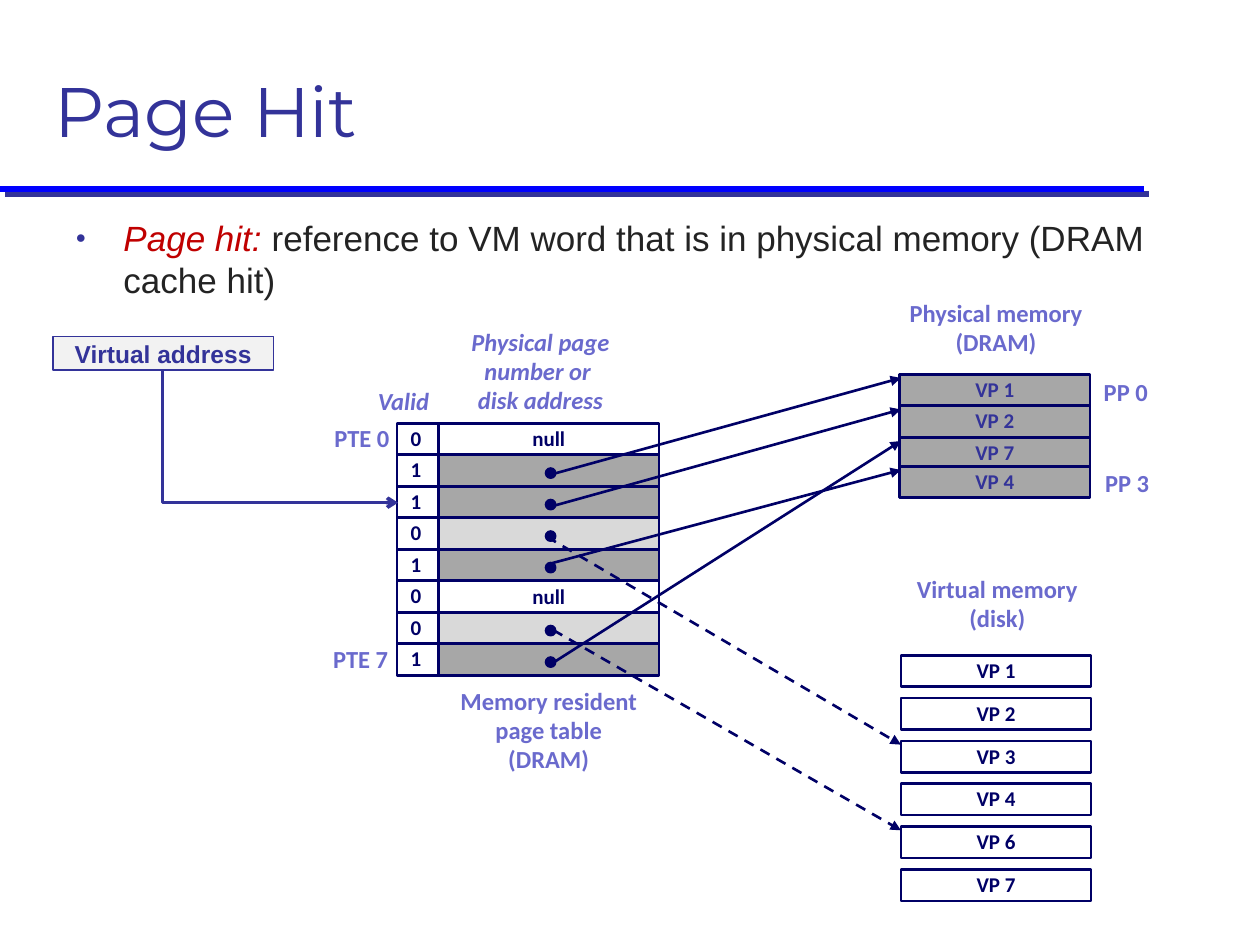
from typing import NamedTuple

from lxml.etree import SubElement
from pptx import Presentation
from pptx.dml.color import RGBColor
from pptx.enum.dml import MSO_LINE
from pptx.enum.shapes import MSO_CONNECTOR, MSO_SHAPE
from pptx.enum.text import MSO_ANCHOR, MSO_AUTO_SIZE, PP_ALIGN
from pptx.oxml.ns import qn
from pptx.util import Inches, Pt

# The slide is a grid of 40 columns by 30 rows; one table row is one grid row
COLS, ROWS = 40, 30
NAVY, INDIGO, LILAC = "000066", "333399", "6A6ACD"
WHITE, LIGHT, DARK = "FFFFFF", "D9D9D9", "A7A7A7"


class Box(NamedTuple):
    x: float
    y: float
    w: float
    h: float


class Entry(NamedTuple):
    valid: str
    fill: str
    text: str = ""


class Frame(NamedTuple):
    name: str
    y: float


class Link(NamedTuple):
    row: int
    x: float
    dy: float
    target: Frame
    dash: bool = False


class Label(NamedTuple):
    text: str
    box: Box
    align: PP_ALIGN = PP_ALIGN.CENTER
    anchor: MSO_ANCHOR = MSO_ANCHOR.MIDDLE
    italic: bool = False
    wrap: bool = False


TABLE_X, TABLE_Y, VALID_W, ADDR_W = 12.6, 13.44, 1.32, 7
DRAM_X, DISK_X, FRAME_W = 28.56, 28.6, 6.04

ENTRIES = [Entry("0", WHITE, "null"), Entry("1", DARK), Entry("1", DARK),
           Entry("0", LIGHT), Entry("1", DARK), Entry("0", WHITE, "null"),
           Entry("0", LIGHT), Entry("1", DARK)]
DRAM = [Frame("VP 1", 11.88), Frame("VP 2", 12.88),
        Frame("VP 7", 13.88), Frame("VP 4", 14.8)]
DISK = [Frame(f"VP {n}", 20.8 + 1.36 * i)
        for i, n in enumerate((1, 2, 3, 4, 6, 7))]
LINKS = [Link(1, 17.44, 0.64, DRAM[0]), Link(2, 17.64, 0.6, DRAM[1]),
         Link(3, 17.36, 0.6, DISK[2], True), Link(4, 17.52, 0.44, DRAM[3]),
         Link(6, 17.56, 0.56, DISK[4], True), Link(7, 17.56, 0.6, DRAM[2])]
LABELS = [
    Label("Memory resident\npage table\n(DRAM)", Box(14.2, 21.64, 6.44, 3.2),
          anchor=MSO_ANCHOR.TOP),
    Label("Physical memory\n(DRAM)", Box(28.44, 9.32, 6.36, 2.28),
          anchor=MSO_ANCHOR.TOP),
    Label("Virtual memory\n(disk)", Box(28.68, 18.08, 5.96, 2.28),
          anchor=MSO_ANCHOR.TOP),
    Label("Valid", Box(11.6, 12.12, 3, 1.36), PP_ALIGN.LEFT,
          MSO_ANCHOR.TOP, italic=True, wrap=True),
    Label("Physical page\nnumber or \ndisk address",
          Box(14.44, 10.2, 5.44, 3.2), italic=True),
    Label("PTE 0", Box(10.2, 13.24, 2.56, 1.36), PP_ALIGN.RIGHT),
    Label("PTE 7", Box(10.16, 20.28, 2.56, 1.36), PP_ALIGN.RIGHT),
    Label("PP 0", Box(34.64, 11.8, 2.2, 1.36)),
    Label("PP 3", Box(34.68, 14.68, 2.2, 1.36)),
]

prs = Presentation()
prs.slide_width, prs.slide_height = Inches(10), Inches(7.5)
s = prs.slides.add_slide(prs.slide_layouts[1])


def gx(cols: float) -> int:
    return round(prs.slide_width * cols / COLS)


def gy(rows: float) -> int:
    return round(prs.slide_height * rows / ROWS)


def place(box: Box) -> tuple:
    return gx(box.x), gy(box.y), gx(box.w), gy(box.h)


def rgb(color: str) -> RGBColor:
    return RGBColor.from_string(color)


def add_run(p, text: str, *, size: float, color: str, font: str = "Calibri",
            bold: bool = False, italic: bool = False) -> None:
    r = p.add_run()
    r.text = text
    f = r.font
    f.name, f.size, f.bold, f.italic = font, Pt(size), bold, italic
    f.color.rgb = rgb(color)


def write(sp, text: str, *, align=PP_ALIGN.CENTER, anchor=MSO_ANCHOR.MIDDLE,
          wrap: bool = False, spacing: float = 0.98, bold: bool = True,
          **fmt) -> None:
    tf = sp.text_frame
    tf.word_wrap, tf.vertical_anchor = wrap, anchor
    for i, line in enumerate(text.split("\n")):
        p = tf.add_paragraph() if i else tf.paragraphs[0]
        p.alignment, p.line_spacing = align, spacing
        add_run(p, line, bold=bold, **fmt)


def add_box(box: Box, fill: str, line: str = NAVY, width: float = 1.5,
            kind=MSO_SHAPE.RECTANGLE):
    sp = s.shapes.add_shape(kind, *place(box))
    sp.shadow.inherit = False
    sp.fill.solid()
    sp.fill.fore_color.rgb = rgb(fill)
    sp.line.color.rgb = rgb(line)
    sp.line.width = Pt(width)
    return sp


def add_text(box: Box, text: str, **fmt) -> None:
    tb = s.shapes.add_textbox(*place(box))
    write(tb, text, **fmt)
    tb.text_frame.auto_size = MSO_AUTO_SIZE.SHAPE_TO_FIT_TEXT


def add_line(x1: float, y1: float, x2: float, y2: float, *, color: str = NAVY,
             width: float = 1.5, head: str = "", dash: bool = False,
             kind=MSO_CONNECTOR.STRAIGHT):
    cx = s.shapes.add_connector(kind, gx(x1), gy(y1), gx(x2), gy(y2))
    cx.line.color.rgb = rgb(color)
    cx.line.width = Pt(width)
    if dash:
        cx.line.dash_style = MSO_LINE.DASH
    if head:
        SubElement(cx.line._get_or_add_ln(), qn("a:tailEnd"), type=head)
    SubElement(cx._element.spPr, qn("a:effectLst"))
    return cx


# Rule under the title, with its offset shadow
rule = add_line(0, 6, 36.32, 6, color="0000FF", width=3.5)
shadow = SubElement(rule._element.spPr.find(qn("a:effectLst")),
                    qn("a:outerShdw"), dist=str(Pt(4.2)), dir="2700000",
                    algn="ctr", rotWithShape="0")
SubElement(shadow, qn("a:srgbClr"), val=INDIGO)

# Title and bullet
title, body = s.shapes.title, s.placeholders[1]
title.left, title.top, title.width, title.height = place(Box(1.32, 1.56, 36.24, 3.44))
write(title, "Page Hit", align=PP_ALIGN.LEFT, anchor=MSO_ANCHOR.BOTTOM, wrap=True,
      spacing=1.0, bold=False, size=40, color=INDIGO, font="Montserrat")
body.left, body.top, body.width, body.height = place(Box(2, 6.68, 36.36, 2.64))
for ph in (title, body):
    ph.text_frame.auto_size = MSO_AUTO_SIZE.NONE
p = body.text_frame.paragraphs[0]
add_run(p, "Page hit: ", size=20, color="C00000", font="Arial", italic=True)
add_run(p, "reference to VM word that is in physical memory (DRAM cache hit)",
        size=20, color="232323", font="Arial")
pPr = p._p.get_or_add_pPr()
pPr.set("marL", str(Inches(0.38)))
pPr.set("indent", str(-Inches(0.38)))
SubElement(SubElement(pPr, qn("a:buClr")), qn("a:srgbClr"), val=INDIGO)
SubElement(pPr, qn("a:buSzPct"), val="50000")
SubElement(pPr, qn("a:buChar"), char="●")

# Page table
for i, entry in enumerate(ENTRIES):
    y = TABLE_Y + i
    cell = add_box(Box(TABLE_X + VALID_W, y, ADDR_W, 1), entry.fill)
    if entry.text:
        write(cell, entry.text, size=12, color=NAVY)
    add_box(Box(TABLE_X, y, VALID_W, 1), WHITE).fill.background()
    add_text(Box(TABLE_X + 0.04, y - 0.1, 1.12, 1.2), entry.valid,
             align=PP_ALIGN.LEFT, anchor=MSO_ANCHOR.TOP, size=12, color=NAVY)

# Frames of physical memory and pages on disk
for frames, x, fill, color in ((DRAM, DRAM_X, DARK, INDIGO),
                               (DISK, DISK_X, WHITE, NAVY)):
    for frame in frames:
        write(add_box(Box(x, frame.y, FRAME_W, 1), fill), frame.name,
              size=12, color=color)

# Pointers from table entries to pages
for link in LINKS:
    y = TABLE_Y + link.row
    add_box(Box(17.32, y + 0.42, 0.32, 0.32), NAVY, width=1, kind=MSO_SHAPE.OVAL)
    add_line(link.x, y + link.dy, DISK_X, link.target.y + 0.12,
             head="triangle", dash=link.dash)

# Labels
for label in LABELS:
    add_text(label.box, label.text, align=label.align, anchor=label.anchor,
             wrap=label.wrap, italic=label.italic, size=14, color=LILAC)

# Virtual address and its elbow arrow, a quarter turn of the preset bend
write(add_box(Box(1.68, 10.68, 7, 1.08), "F2F2F2", INDIGO, 1),
      "Virtual address", wrap=True, spacing=1.0, size=14, color=INDIGO, font="Arial")
elbow = add_line(6.78, 10.1, 11.02, 17.58, color=INDIGO, width=2, head="arrow",
                 kind=MSO_CONNECTOR.ELBOW)
spPr = elbow._element.spPr
spPr.find(qn("a:prstGeom")).set("prst", "bentConnector2")
spPr.find(qn("a:xfrm")).set("rot", "16200000")
spPr.find(qn("a:xfrm")).set("flipH", "1")

prs.save("out.pptx")
